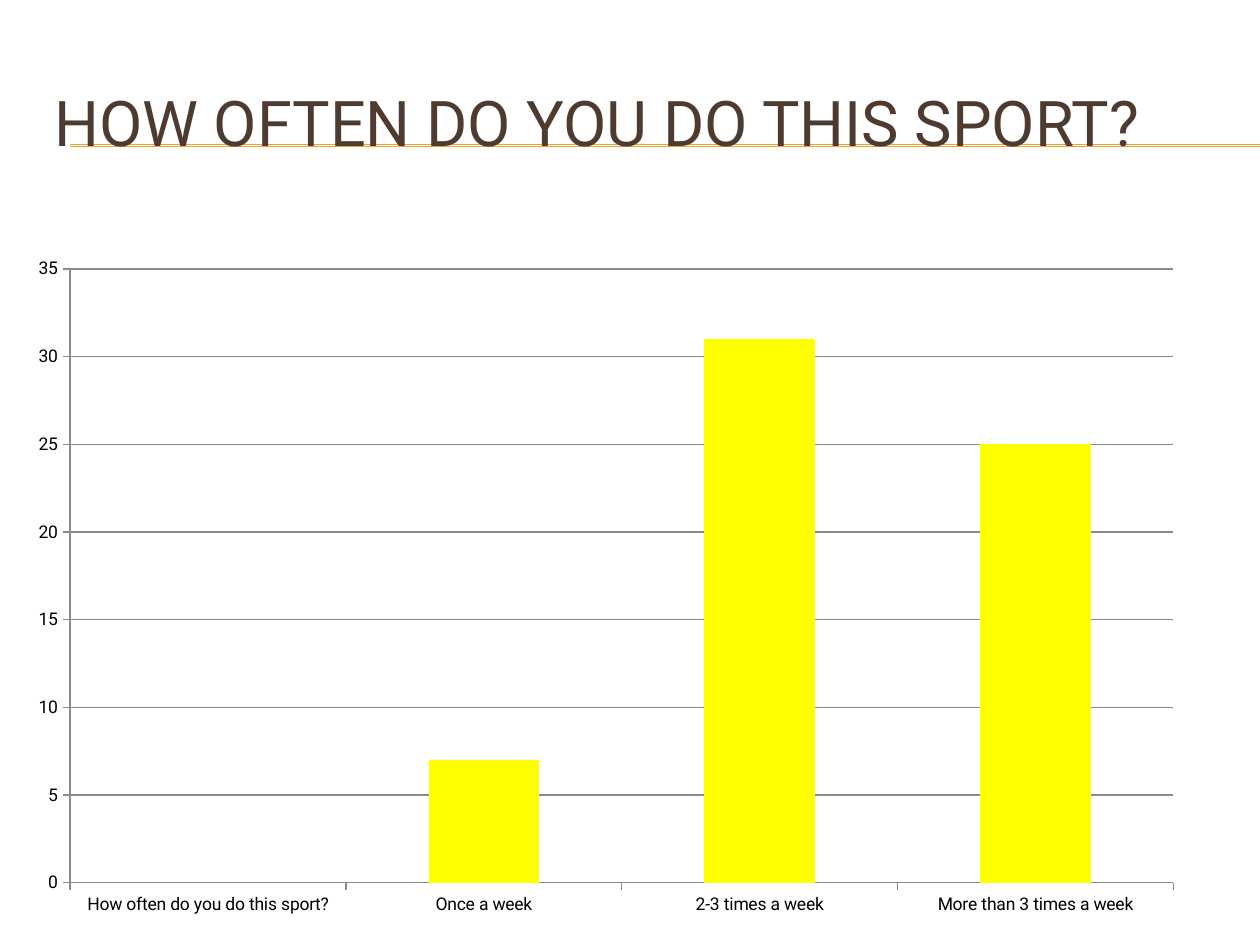
from lxml import etree
from pptx import Presentation
from pptx.chart.data import CategoryChartData
from pptx.dml.color import RGBColor
from pptx.enum.chart import XL_CHART_TYPE, XL_TICK_MARK
from pptx.enum.shapes import MSO_CONNECTOR
from pptx.enum.text import MSO_ANCHOR, MSO_AUTO_SIZE, PP_ALIGN
from pptx.oxml.ns import qn
from pptx.util import Cm, Pt

STACKED = XL_CHART_TYPE.COLUMN_STACKED
OUTSIDE = XL_TICK_MARK.OUTSIDE
STRAIGHT = MSO_CONNECTOR.STRAIGHT

TITLE = "HOW OFTEN DO YOU DO THIS SPORT?"
ANSWERS = [
    ("How often do you do this sport?", None),
    ("Once a week", 7),
    ("2-3 times a week", 31),
    ("More than 3 times a week", 25),
]
FONT = "Roboto"
WIDTH, HEIGHT = 25.4, 19.05
RULES = (2.92, 2.95)
RULE_LEFT = 1.42
TITLE_BOX = (0.84, 1.27, 24.13, 2.34)
CHART_BOX = (0.3, 4.95, 23.83, 13.77)
BROWN, GOLD, YELLOW, GREY, BLACK = "4E3B30", "F0A22E", "FFFF00", "8B8B8B", "000000"


def put(obj, **values):
    for name, value in values.items():
        setattr(obj, name, value)


def paint(fill, color):
    fill.solid()
    fill.fore_color.rgb = RGBColor.from_string(color)


def stroke(line, color):
    paint(line.fill, color)
    line.width = Pt(0.75)


def style(font, size, color):
    put(font, name=FONT, size=Pt(size), bold=False)
    font.color.rgb = RGBColor.from_string(color)


def add_rule(slide, top):
    rule = slide.shapes.add_connector(
        STRAIGHT, Cm(RULE_LEFT), Cm(top), Cm(WIDTH), Cm(top))
    stroke(rule.line, GOLD)
    etree.SubElement(rule.element.spPr, qn("a:effectLst"))


def set_title(slide):
    title = slide.shapes.title
    names = ("left", "top", "width", "height")
    put(title, **dict(zip(names, map(Cm, TITLE_BOX))))
    frame = title.text_frame
    frame.text = TITLE
    put(frame, word_wrap=True, auto_size=MSO_AUTO_SIZE.NONE,
        vertical_anchor=MSO_ANCHOR.MIDDLE)
    line = frame.paragraphs[0]
    line.alignment = PP_ALIGN.LEFT
    style(line.runs[0].font, 36, BROWN)


def add_bars(slide):
    cats, counts = zip(*ANSWERS)
    data = CategoryChartData()
    data.categories = cats
    data.add_series("Series 1", counts)
    chart = slide.shapes.add_chart(STACKED, *map(Cm, CHART_BOX), data).chart
    put(chart, has_legend=False, has_title=False)
    style(chart.font, 10, BLACK)
    plot = chart.plots[0]
    put(plot, gap_width=150, overlap=100, vary_by_categories=False)
    paint(plot.series[0].format.fill, YELLOW)
    for axis in (chart.category_axis, chart.value_axis):
        put(axis, major_tick_mark=OUTSIDE)
        stroke(axis.format.line, GREY)
    put(chart.value_axis, minimum_scale=0, maximum_scale=35, major_unit=5,
        has_major_gridlines=True)
    stroke(chart.value_axis.major_gridlines.format.line, GREY)


def main():
    """Build the survey slide with its title, rules and column chart."""
    deck = Presentation()
    put(deck, slide_width=Cm(WIDTH), slide_height=Cm(HEIGHT))
    slide = deck.slides.add_slide(deck.slide_layouts[5])
    paint(slide.background.fill, "FFFFFF")
    for top in RULES:
        add_rule(slide, top)
    set_title(slide)
    tree = slide.shapes.title.element.getparent()
    tree.append(slide.shapes.title.element)
    add_bars(slide)
    deck.save("out.pptx")


if __name__ == "__main__":
    main()
